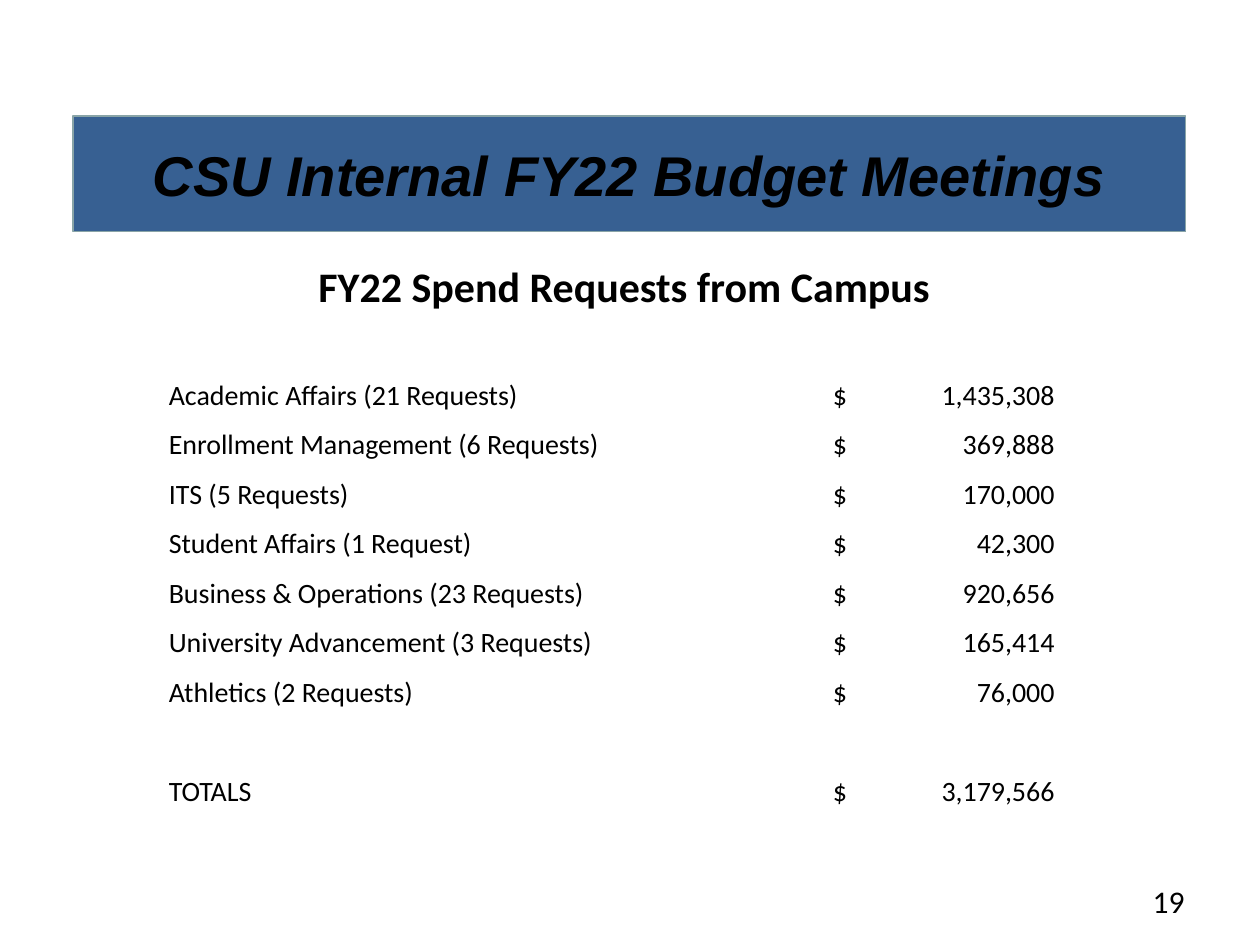
from pptx import Presentation
from pptx.dml.color import RGBColor
from pptx.enum.shapes import MSO_SHAPE
from pptx.enum.text import MSO_ANCHOR, PP_ALIGN
from pptx.oxml.ns import qn
from pptx.util import Inches, Pt
from lxml import etree

RECT = MSO_SHAPE.RECTANGLE
MIDDLE, BOTTOM = MSO_ANCHOR.MIDDLE, MSO_ANCHOR.BOTTOM
LEFT, CENTER, RIGHT = PP_ALIGN.LEFT, PP_ALIGN.CENTER, PP_ALIGN.RIGHT
BLACK = RGBColor(0x00, 0x00, 0x00)
BLUE = RGBColor(0x37, 0x60, 0x92)
EDGE = RGBColor(0x89, 0xA4, 0xA7)

# Content
TITLE = "CSU Internal FY22 Budget Meetings"
HEADING = "FY22 Spend Requests from Campus"
PAGE = "19"
REQUESTS = [
    ("Academic Affairs (21 Requests)", "1,435,308"),
    ("Enrollment Management (6 Requests)", "369,888"),
    ("ITS (5 Requests)", "170,000"),
    ("Student Affairs (1 Request)", "42,300"),
    ("Business & Operations (23 Requests)", "920,656"),
    ("University Advancement (3 Requests)", "165,414"),
    ("Athletics (2 Requests)", "76,000"),
]
TOTAL = ("TOTALS", "3,179,566")
ROWS = [None, *REQUESTS, None, TOTAL]  # None is an empty row

# Table layout
COLUMNS = (5.23, 2.02)
HEIGHT, HEADING_HEIGHT = 4.5, 0.57
ROW_HEIGHT = (HEIGHT - HEADING_HEIGHT) / len(ROWS)
AMOUNT_INSET, AMOUNT_TAB = 0.05, 1.76


def write(tf, text, size, align=LEFT, font="Calibri", bold=False, italic=False):
    p = tf.paragraphs[0]
    p.text = text
    p.alignment = align
    for r in p.runs:
        r.font.name, r.font.size = font, Pt(size)
        r.font.bold, r.font.italic = bold, italic
        r.font.color.rgb = BLACK
    return p


def add_right_tab(p, position):
    tabs = etree.SubElement(p._p.get_or_add_pPr(), qn("a:tabLst"))
    etree.SubElement(tabs, qn("a:tab"), pos=str(Inches(position)), algn="r")


prs = Presentation()
prs.slide_width, prs.slide_height = Inches(10), Inches(7.5)
s = prs.slides.add_slide(prs.slide_layouts[6])

# Page number
box = s.shapes.add_textbox(Inches(7.17), Inches(6.95), Inches(2.33), Inches(0.4))
box.text_frame.word_wrap = True
write(box.text_frame, PAGE, 18, RIGHT)

# Title banner
banner = s.shapes.add_shape(RECT, Inches(0.58), Inches(0.92), Inches(8.83), Inches(0.92))
banner.shadow.inherit = False
banner.fill.solid()
banner.fill.fore_color.rgb = BLUE
banner.line.color.rgb = EDGE
banner.line.width = Pt(0.75)
banner.text_frame.vertical_anchor = MIDDLE
write(banner.text_frame, TITLE, 32, CENTER, "Arial", bold=True, italic=True)

# Spend request table
table = s.shapes.add_table(len(ROWS) + 1, len(COLUMNS), Inches(1.33), Inches(1.92),
                           Inches(sum(COLUMNS)), Inches(HEIGHT)).table
table.first_row = table.horz_banding = False
for column, width in zip(table.columns, COLUMNS):
    column.width = Inches(width)
for row in table.rows:
    row.height = Inches(ROW_HEIGHT)
table.rows[0].height = Inches(HEADING_HEIGHT)
for cell in table.iter_cells():
    cell.fill.background()
    cell.vertical_anchor = BOTTOM
    cell.margin_left = cell.margin_right = cell.margin_top = Inches(0.01)
    cell.margin_bottom = 0

heading = table.cell(0, 0)
heading.merge(table.cell(0, 1))
write(heading.text_frame, HEADING, 24, CENTER, bold=True)

for i, entry in enumerate(ROWS, start=1):
    if entry is None:
        continue
    label, amount = entry
    write(table.cell(i, 0).text_frame, label, 16)
    cell = table.cell(i, 1)
    cell.margin_left = Inches(AMOUNT_INSET)
    add_right_tab(write(cell.text_frame, f"$\t{amount}", 16), AMOUNT_TAB)

prs.save("out.pptx")
